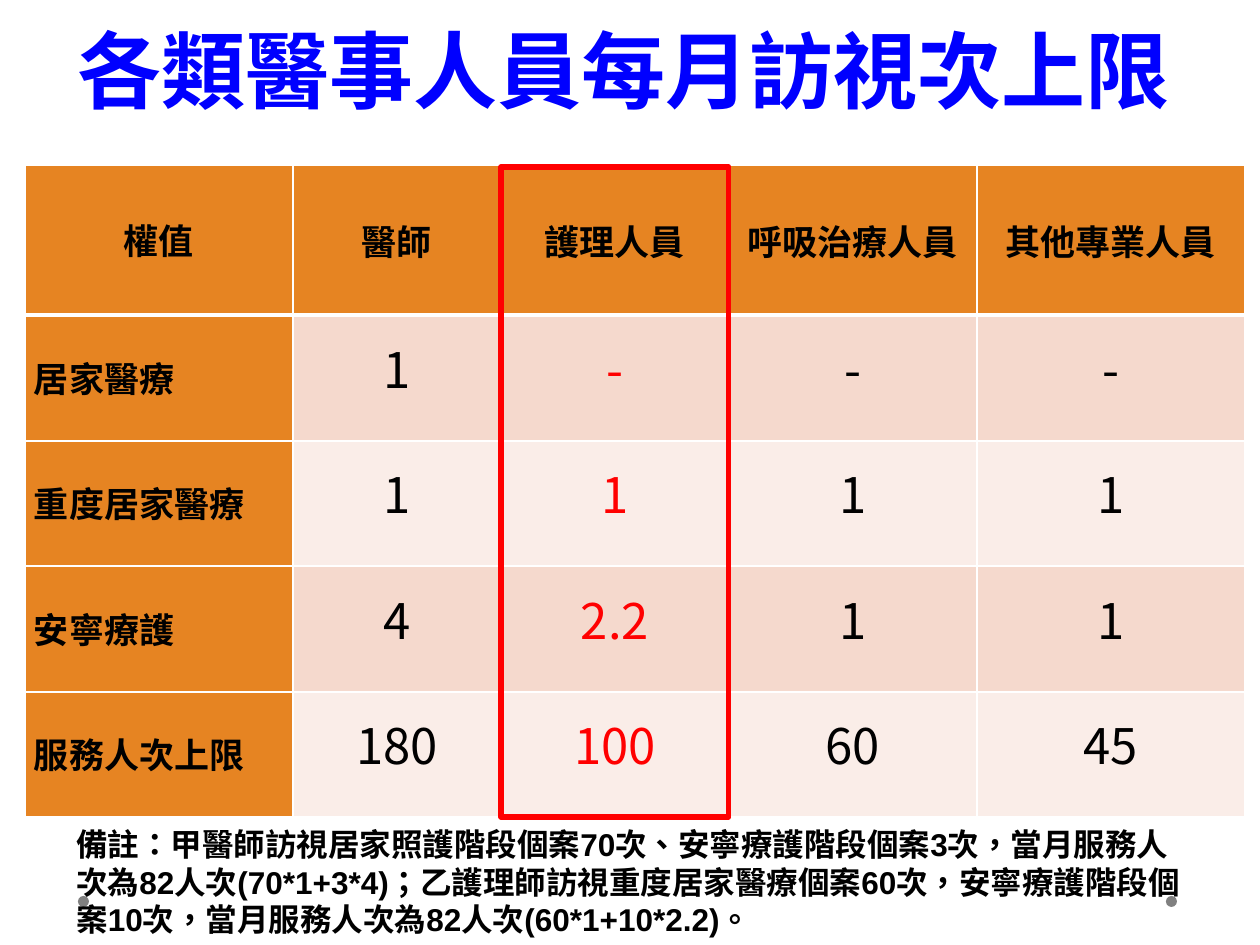
"""Build a slide with the monthly visit limits of each kind of medical staff."""
from lxml.etree import SubElement
from pptx import Presentation
from pptx.dml.color import RGBColor
from pptx.enum.lang import MSO_LANGUAGE_ID
from pptx.enum.shapes import MSO_SHAPE
from pptx.enum.text import MSO_ANCHOR, PP_ALIGN
from pptx.oxml.ns import qn
from pptx.util import Emu, Pt

PX = 914400 // 126
CJK = "Noto Sans CJK SC"
COLORS = {
    "title": "0000FF", "text": "000000", "mark": "FF0000", "dot": "808080",
    "head": "E68422", "odd": "F5D9CD", "even": "FAEDE8", "border": "FFFFFF",
}
COL_WIDTHS = [268, 208, 228, 248, 268]
ROW_HEIGHTS = [150, 126, 125, 126, 125]
MARKED_COL = 2
ROWS = [
    ["權值", "醫師", "護理人員", "呼吸治療人員", "其他專業人員"],
    ["居家醫療", "1", "-", "-", "-"],
    ["重度居家醫療", "1", "1", "1", "1"],
    ["安寧療護", "4", "2.2", "1", "1"],
    ["服務人次上限", "180", "100", "60", "45"],
]
NOTE = ("備註：甲醫師訪視居家照護階段個案70次、安寧療護階段個案3次，當月服務人次為82人次"
        "(70*1+3*4)；乙護理師訪視重度居家醫療個案60次，安寧療護階段個案10次，"
        "當月服務人次為82人次(60*1+10*2.2)。")


def px(*values):
    return [Emu(v * PX) for v in values]


def rgb(name):
    return RGBColor.from_string(COLORS[name])


def write(tf, text, size=20, color="text", bold=True, font=CJK,
          align=PP_ALIGN.CENTER, spacing=None):
    p = tf.paragraphs[0]
    p.alignment = align
    if spacing:
        p.line_spacing = Pt(spacing)
    r = p.add_run()
    r.text = text
    r.font.name = font
    r.font.size = Pt(size)
    r.font.bold = bold
    r.font.color.rgb = rgb(color)
    r.font.language_id = MSO_LANGUAGE_ID.TRADITIONAL_CHINESE
    SubElement(r.font._element, qn("a:ea"), typeface=CJK)


def add_text(s, box, text, anchor, **fmt):
    tf = s.shapes.add_textbox(*px(*box)).text_frame
    tf.word_wrap = True
    tf.vertical_anchor = anchor
    write(tf, text, **fmt)


def add_shape(s, kind, box, fill=None, line=None, width=3):
    sp = s.shapes.add_shape(kind, *px(*box))
    sp.shadow.inherit = False
    if fill:
        sp.fill.solid()
        sp.fill.fore_color.rgb = rgb(fill)
    else:
        sp.fill.background()
    if line:
        sp.line.color.rgb = rgb(line)
        sp.line.width = Pt(width)
    else:
        sp.line.fill.background()


def set_borders(cell, **widths):
    tc_pr = cell._tc.get_or_add_tcPr()
    for side, width in widths.items():
        ln = SubElement(tc_pr, qn(f"a:ln{side}"), w=str(Pt(width)))
        fill = SubElement(ln, qn("a:solidFill"))
        SubElement(fill, qn("a:srgbClr"), val=COLORS["border"])


def fill_cell(cell, text, row, col):
    cell.margin_left, cell.margin_right = px(9, 9)
    cell.margin_top = cell.margin_bottom = 0
    cell.vertical_anchor = MSO_ANCHOR.MIDDLE
    set_borders(cell, L=1, R=1, T=3 if row == 1 else 1, B=3 if row == 0 else 1)
    heading = row == 0 or col == 0
    cell.fill.solid()
    cell.fill.fore_color.rgb = rgb("head" if heading else "odd" if row % 2 else "even")
    write(cell.text_frame, text,
          size=20 if heading else 28,
          bold=heading,
          color="mark" if col == MARKED_COL and not heading else "text",
          align=PP_ALIGN.JUSTIFY if col == 0 and row else PP_ALIGN.CENTER,
          spacing=28 if row or col == 0 else None)


def add_limits_table(s, left, top):
    box = px(left, top, sum(COL_WIDTHS), sum(ROW_HEIGHTS))
    table = s.shapes.add_table(len(ROWS), len(COL_WIDTHS), *box).table
    for column, width in zip(table.columns, px(*COL_WIDTHS)):
        column.width = width
    for row, height in zip(table.rows, px(*ROW_HEIGHTS)):
        row.height = height
    for i, texts in enumerate(ROWS):
        for j, text in enumerate(texts):
            fill_cell(table.cell(i, j), text, i, j)


def main():
    prs = Presentation()
    prs.slide_width, prs.slide_height = px(1260, 945)
    s = prs.slides.add_slide(prs.slide_layouts[6])
    for left in (1166, 78):
        add_shape(s, MSO_SHAPE.OVAL, (left, 896, 11, 11), fill="dot")
    add_text(s, (44, 16, 1160, 110), "各類醫事人員每月訪視次上限",
             MSO_ANCHOR.BOTTOM, size=48, color="title")
    add_limits_table(s, 25, 165)
    add_shape(s, MSO_SHAPE.RECTANGLE, (501, 167, 228, 650), line="mark")
    add_text(s, (64, 818, 1132, 127), NOTE, MSO_ANCHOR.MIDDLE,
             size=18, font="Arial", align=PP_ALIGN.LEFT)
    prs.save("out.pptx")


if __name__ == "__main__":
    main()
